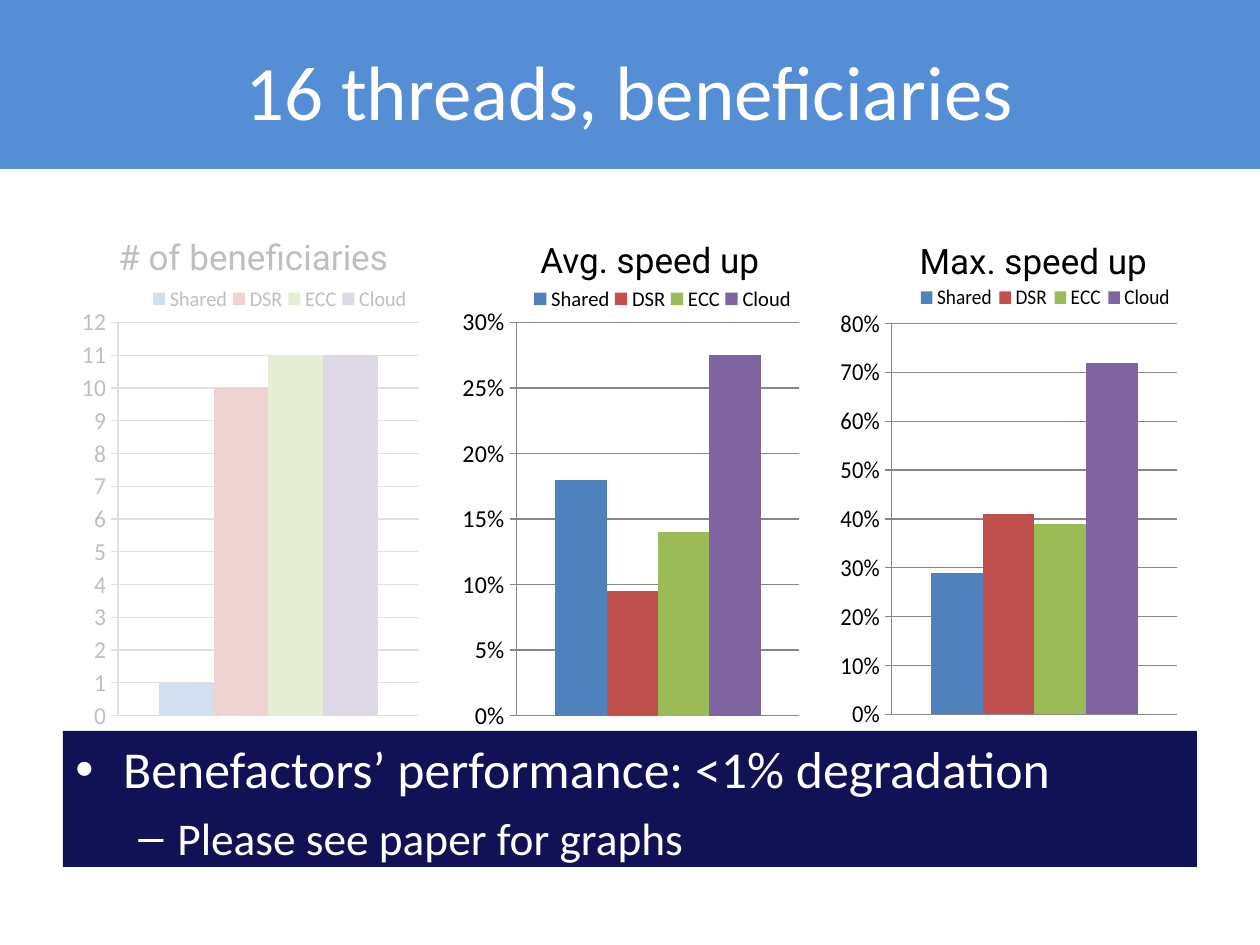
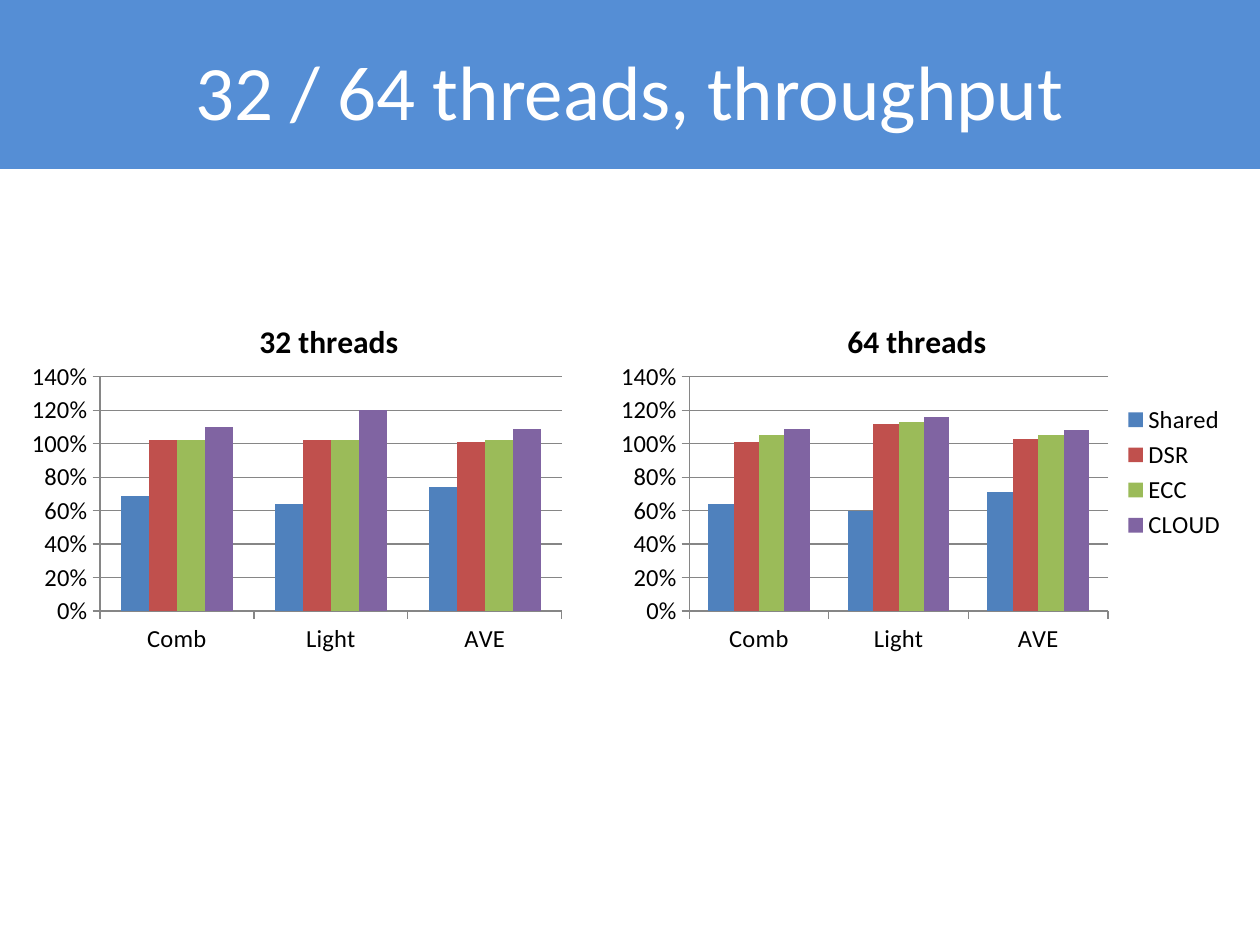
from lxml import etree
from pptx import Presentation
from pptx.chart.data import CategoryChartData
from pptx.dml.color import RGBColor
from pptx.enum.chart import XL_CHART_TYPE, XL_LEGEND_POSITION, XL_TICK_MARK
from pptx.enum.shapes import MSO_SHAPE
from pptx.enum.text import MSO_ANCHOR, PP_ALIGN
from pptx.oxml.ns import qn
from pptx.util import Inches, Pt

CLUSTERED = XL_CHART_TYPE.COLUMN_CLUSTERED
LEGEND_RIGHT = XL_LEGEND_POSITION.RIGHT
TICK_OUT, TICK_NONE = XL_TICK_MARK.OUTSIDE, XL_TICK_MARK.NONE
RECTANGLE = MSO_SHAPE.RECTANGLE
TOP, MIDDLE = MSO_ANCHOR.TOP, MSO_ANCHOR.MIDDLE
LEFT, CENTER = PP_ALIGN.LEFT, PP_ALIGN.CENTER

WHITE = RGBColor(0xFF, 0xFF, 0xFF)
BLACK = RGBColor(0, 0, 0)
BAND_BLUE = RGBColor(0x55, 0x8E, 0xD5)
NAVY = RGBColor(0x11, 0x11, 0x55)
GRID_GRAY = RGBColor(0x86, 0x86, 0x86)
SERIES_COLORS = (RGBColor(0x4F, 0x81, 0xBD), RGBColor(0xC0, 0x50, 0x4D),
                 RGBColor(0x9B, 0xBB, 0x59), RGBColor(0x80, 0x64, 0xA2))
BODY_FONT, LABEL_FONT = "Calibri", "Roboto"

BENEFICIARIES_TITLE = "16 threads, beneficiaries"
THROUGHPUT_TITLE = "32 / 64 threads, throughput"

# Boxes are left, top, width, height in inches;
# plot, legend and title layouts are fractions of their chart.
BENEFICIARY_SCHEMES = ("Shared", "DSR", "ECC", "Cloud")
BENEFICIARY_CHARTS = [
    dict(label="# of beneficiaries", label_box=(0.84, 1.82, 2.49, 0.44),
         box=(0.65, 2.23, 2.68, 3.57), values=(1, 10, 11, 11),
         maximum=12, step=1, number_format="General",
         plot=(0.07, 0.093, 0.93, 0.879), legend=(0.16, 0, 0.82, 0.08)),
    dict(label="Avg. speed up", label_box=(4.19, 1.84, 2.15, 0.44),
         box=(3.67, 2.23, 2.68, 3.57), values=(0.18, 0.095, 0.14, 0.275),
         maximum=0.3, step=0.05, number_format="0%",
         plot=(0.144, 0.093, 0.856, 0.879), legend=(0.18, 0, 0.81, 0.08)),
    dict(label="Max. speed up", label_box=(7.2, 1.85, 2.15, 0.44),
         box=(6.67, 2.22, 2.68, 3.57), values=(0.29, 0.41, 0.39, 0.72),
         maximum=0.8, step=0.1, number_format="0%",
         plot=(0.08, 0.098, 0.92, 0.874), legend=(0.15, 0, 0.85, 0.08)),
]
FADED_BOX = (0.37, 1.48, 3.14, 4.31)
FADE_PERCENT = 75

# text, size, level, left margin, hanging indent, bullet, space before
BENEFACTOR_NOTES = [
    ("Benefactors’ performance: <1% degradation", 29.6, 0, 0.38, 0.38, "•", 0),
    ("Please see paper for graphs", 25.9, 1, 0.81, 0.31, "–", 6),
]

THROUGHPUT_SCHEMES = ("Shared", "DSR", "ECC", "CLOUD")
WORKLOADS = ("Comb", "Light", "AVE")
THROUGHPUT_CHARTS = [
    dict(title="64 threads", box=(4.83, 2.25, 5, 3), has_legend=True,
         values=((0.64, 0.6, 0.71), (1.01, 1.12, 1.03),
                 (1.05, 1.13, 1.05), (1.09, 1.16, 1.08)),
         plot=(0.128, 0.247, 0.665, 0.62), title_at=(0.37, 0.08)),
    dict(title="32 threads", box=(0.17, 2.25, 4.39, 3), has_legend=False,
         values=((0.69, 0.64, 0.74), (1.02, 1.02, 1.01),
                 (1.02, 1.02, 1.02), (1.1, 1.2, 1.09)),
         plot=(0.142, 0.247, 0.835, 0.62), title_at=(0.42, 0.08)),
]


def place(box):
    return [Inches(length) for length in box]


def add_run(paragraph, text, size, color, font_name=BODY_FONT):
    run = paragraph.add_run()
    run.text = text
    run.font.size = Pt(size)
    run.font.name = font_name
    run.font.color.rgb = color


def add_rectangle(slide, box, color):
    shape = slide.shapes.add_shape(RECTANGLE, *place(box))
    shape.shadow.inherit = False
    shape.fill.solid()
    shape.fill.fore_color.rgb = color
    shape.line.fill.background()
    return shape


def add_text(slide, box, text, size, color, font_name, align=LEFT, anchor=TOP):
    frame = slide.shapes.add_textbox(*place(box)).text_frame
    frame.word_wrap = True
    frame.vertical_anchor = anchor
    paragraph = frame.paragraphs[0]
    paragraph.alignment = align
    add_run(paragraph, text, size, color, font_name)


def add_titled_slide(presentation, title):
    slide = presentation.slides.add_slide(presentation.slide_layouts[6])
    add_rectangle(slide, (0, 0, 10, 1.34), BAND_BLUE)
    add_text(slide, (0.5, 0.09, 9, 1.25), title, 44, WHITE, BODY_FONT,
             CENTER, MIDDLE)
    return slide


def set_layout(parent, index, fractions, inner=False):
    """Give a chart part a fixed place, as x, y and perhaps width, height."""
    for old_layout in parent.findall(qn("c:layout")):
        parent.remove(old_layout)
    layout = etree.Element(qn("c:layout"))
    parent.insert(index, layout)
    manual = etree.SubElement(layout, qn("c:manualLayout"))
    settings = [("layoutTarget", "inner")] if inner else []
    settings += [("xMode", "edge"), ("yMode", "edge")]
    settings += zip("xywh", fractions)
    for tag, value in settings:
        etree.SubElement(manual, qn("c:" + tag)).set("val", str(value))


def add_column_chart(slide, box, categories, names, rows, plot_layout,
                     maximum, step, number_format):
    data = CategoryChartData()
    data.categories = categories
    for name, values in zip(names, rows):
        data.add_series(name, values)
    chart = slide.shapes.add_chart(CLUSTERED, *place(box), data).chart
    chart.font.size = Pt(10)
    chart.font.name = BODY_FONT
    chart.font.color.rgb = BLACK
    chart.has_title = False
    chart.has_legend = False

    plot = chart.plots[0]
    plot.gap_width = 150
    plot.overlap = 0
    plot.vary_by_categories = False
    for series, color in zip(plot.series, SERIES_COLORS):
        series.format.fill.solid()
        series.format.fill.fore_color.rgb = color
        series.invert_if_negative = False

    value_axis = chart.value_axis
    value_axis.minimum_scale = 0
    value_axis.maximum_scale = maximum
    value_axis.major_unit = step
    value_axis.tick_labels.number_format = number_format
    value_axis.tick_labels.number_format_is_linked = False
    value_axis.has_major_gridlines = True
    lines = [value_axis.major_gridlines.format.line]
    for axis in (value_axis, chart.category_axis):
        axis.major_tick_mark = TICK_OUT
        axis.minor_tick_mark = TICK_NONE
        axis.tick_labels.font.size = Pt(14)
        lines.append(axis.format.line)
    for line in lines:
        line.color.rgb = GRID_GRAY
        line.width = Pt(0.75)
    set_layout(next(chart.element.iter(qn("c:plotArea"))), 0, plot_layout, True)
    return chart


def add_legend(chart, size):
    chart.has_legend = True
    chart.legend.position = LEGEND_RIGHT
    chart.legend.include_in_layout = False
    chart.legend.font.size = Pt(size)


def add_benefactor_notes(slide):
    frame = add_rectangle(slide, (0.5, 5.8, 9, 1.08), NAVY).text_frame
    frame.word_wrap = True
    frame.vertical_anchor = TOP
    for number, note in enumerate(BENEFACTOR_NOTES):
        text, size, level, margin, hanging, bullet, space_before = note
        paragraph = frame.add_paragraph() if number else frame.paragraphs[0]
        paragraph.alignment = LEFT
        paragraph.level = level
        paragraph.space_before = Pt(space_before)
        properties = paragraph._p.get_or_add_pPr()
        properties.set("marL", str(Inches(margin)))
        properties.set("indent", str(-Inches(hanging)))
        etree.SubElement(properties, qn("a:buFont")).set("typeface", "Arial")
        etree.SubElement(properties, qn("a:buChar")).set("char", bullet)
        add_run(paragraph, text, size, WHITE)


def add_fading_cover(slide):
    cover = add_rectangle(slide, FADED_BOX, WHITE)
    color = next(cover.element.spPr.iter(qn("a:srgbClr")))
    etree.SubElement(color, qn("a:alpha")).set("val", str(FADE_PERCENT * 1000))


def build_beneficiaries(presentation):
    slide = add_titled_slide(presentation, BENEFICIARIES_TITLE)
    add_benefactor_notes(slide)
    for item in BENEFICIARY_CHARTS:
        chart = add_column_chart(
            slide, item["box"], ["1"], BENEFICIARY_SCHEMES,
            [(value,) for value in item["values"]], item["plot"],
            item["maximum"], item["step"], item["number_format"])
        chart.category_axis.visible = False
        add_legend(chart, 12)
        set_layout(next(chart.element.iter(qn("c:legend"))), 1, item["legend"])
        add_text(slide, item["label_box"], item["label"], 20, BLACK, LABEL_FONT)
    add_fading_cover(slide)


def build_throughput(presentation):
    slide = add_titled_slide(presentation, THROUGHPUT_TITLE)
    for item in THROUGHPUT_CHARTS:
        chart = add_column_chart(
            slide, item["box"], WORKLOADS, THROUGHPUT_SCHEMES, item["values"],
            item["plot"], 1.4, 0.2, "0%")
        if item["has_legend"]:
            add_legend(chart, 14)
        chart.has_title = True
        paragraph = chart.chart_title.text_frame.paragraphs[0]
        add_run(paragraph, item["title"], 18, BLACK)
        paragraph.runs[0].font.bold = True
        set_layout(next(chart.element.iter(qn("c:title"))), 1, item["title_at"])


def main():
    presentation = Presentation()
    presentation.slide_width = Inches(10)
    presentation.slide_height = Inches(7.5)
    build_beneficiaries(presentation)
    build_throughput(presentation)
    presentation.save("out.pptx")


if __name__ == "__main__":
    main()
